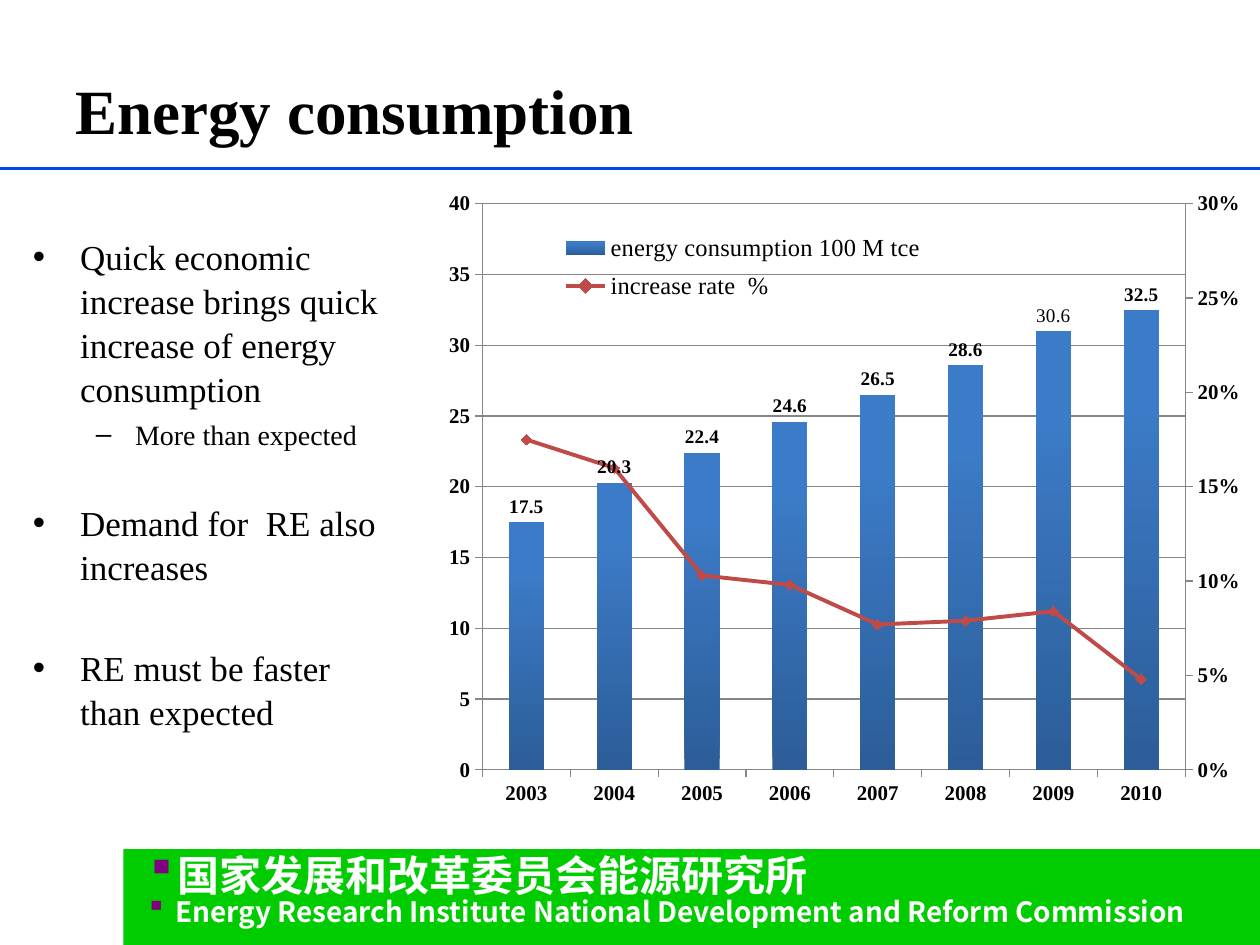
"""Build the energy consumption slide with its bullets, combined chart and footer."""
from copy import deepcopy
from dataclasses import dataclass

from lxml import etree
from pptx import Presentation
from pptx.chart.axis import ValueAxis
from pptx.chart.data import CategoryChartData
from pptx.dml.color import RGBColor
from pptx.enum.chart import (XL_CHART_TYPE, XL_LABEL_POSITION, XL_LEGEND_POSITION,
                             XL_MARKER_STYLE, XL_TICK_MARK)
from pptx.enum.shapes import MSO_CONNECTOR, MSO_SHAPE
from pptx.enum.text import MSO_ANCHOR, MSO_AUTO_SIZE, PP_ALIGN
from pptx.oxml.ns import qn
from pptx.util import Cm, Pt

COLUMNS = XL_CHART_TYPE.COLUMN_CLUSTERED
ABOVE_BAR = XL_LABEL_POSITION.OUTSIDE_END
LEGEND_RIGHT = XL_LEGEND_POSITION.RIGHT
DIAMOND = XL_MARKER_STYLE.DIAMOND
TICK_OUT = XL_TICK_MARK.OUTSIDE
TICK_NONE = XL_TICK_MARK.NONE
STRAIGHT = MSO_CONNECTOR.STRAIGHT
RECTANGLE = MSO_SHAPE.RECTANGLE
MIDDLE = MSO_ANCHOR.MIDDLE
TOP = MSO_ANCHOR.TOP
NO_FIT = MSO_AUTO_SIZE.NONE
LEFT = PP_ALIGN.LEFT

SERIF = "Times New Roman"
SANS = "Noto Sans CJK JP"
COLORS = {
    "text": "000000", "footer": "00CC00", "footer_text": "FFFFFF", "bullet": "800080",
    "rule": "0046F0", "grid": "868686", "rate": "BE4B48",
    "bar_bottom": "2C5D98", "bar_top": "3C7BC7",
}
YEARS = [str(year) for year in range(2003, 2011)]
CONSUMPTION = [17.5, 20.3, 22.4, 24.6, 26.5, 28.6, 31, 32.5]
INCREASE = [0.175, 0.16, 0.103, 0.098, 0.077, 0.079, 0.084, 0.048]


@dataclass
class Bullet:
    """One bulleted paragraph, with its indents in centimetres."""
    text: str
    size: int
    mark: str
    margin: float
    hang: float
    before: float = 0
    level: int = 0


POINTS = [
    Bullet("Quick economic increase brings quick increase of energy consumption",
           20, "•", 0.95, 0.95),
    Bullet("More than expected", 16, "–", 2.06, 0.79, 3.5, 1),
    Bullet("Demand for  RE also increases", 20, "•", 0.95, 0.95, 28),
    Bullet("RE must be faster than expected", 20, "•", 0.95, 0.95, 32),
]
INSTITUTE = [
    Bullet("国家发展和改革委员会能源研究所", 24, "▪", 0.6, 0.6),
    Bullet("Energy Research Institute National Development and Reform Commission",
           16, "▪", 0.6, 0.6, 7),
]


def color(key: str) -> RGBColor:
    """Return a palette colour."""
    return RGBColor.from_string(COLORS[key])


def style_font(font, size: float, color_key: str, name: str = SERIF, bold: bool = False) -> None:
    """Set size, colour, face and weight of a font."""
    font.size, font.name, font.bold = Pt(size), name, bold
    font.color.rgb = color(color_key)


def place(shape, left: float, top: float, width: float, height: float) -> None:
    """Move and size a shape, in centimetres."""
    shape.left, shape.top, shape.width, shape.height = map(Cm, (left, top, width, height))


def write_bullets(frame, bullets: list[Bullet], color_key: str, mark_key: str,
                  face: str, spacing: float, bold: bool = False) -> None:
    """Fill a text frame with bulleted paragraphs."""
    frame.word_wrap = True
    frame.auto_size = NO_FIT
    frame.vertical_anchor = TOP
    frame.text = "\n".join(bullet.text for bullet in bullets)
    for paragraph, bullet in zip(frame.paragraphs, bullets):
        paragraph.level = bullet.level
        properties = paragraph._p.get_or_add_pPr()
        properties.set("marL", str(Cm(bullet.margin)))
        properties.set("indent", str(-Cm(bullet.hang)))
        mark_color = etree.SubElement(properties, qn("a:buClr"))
        etree.SubElement(mark_color, qn("a:srgbClr"), val=COLORS[mark_key])
        etree.SubElement(properties, qn("a:buChar"), char=bullet.mark)
        paragraph.line_spacing = spacing
        paragraph.space_before = Pt(bullet.before)
        for run in paragraph.runs:
            style_font(run.font, bullet.size, color_key, face, bold)
            etree.SubElement(run._r.get_or_add_rPr(), qn("a:ea"), typeface=face)


def add_rule(slide, y: float, width: float) -> None:
    """Draw the line under the title."""
    rule = slide.shapes.add_connector(STRAIGHT, 0, Cm(y), Cm(width), Cm(y))
    rule.line.color.rgb = color("rule")
    rule.line.width = Pt(2)
    etree.SubElement(rule._element.spPr, qn("a:effectLst"))


def add_footer(slide) -> None:
    """Draw the institute's band."""
    band = slide.shapes.add_shape(RECTANGLE, Cm(2.49), Cm(17.12), Cm(22.91), Cm(1.93))
    band.shadow.inherit = False
    band.fill.solid()
    band.fill.fore_color.rgb = color("footer")
    band.line.fill.background()
    institute = slide.shapes.add_textbox(Cm(2.69), Cm(17.45), Cm(21.89), Cm(1.5))
    write_bullets(institute.text_frame, INSTITUTE, "footer_text", "bullet", SANS, 0.5, True)


def set_layout(parent, index: int, inner: bool, **fractions: float) -> None:
    """Give a chart part a manual layout in fractions of the chart."""
    for old in parent.findall(qn("c:layout")):
        parent.remove(old)
    layout = etree.Element(qn("c:layout"))
    manual = etree.SubElement(layout, qn("c:manualLayout"))
    if inner:
        etree.SubElement(manual, qn("c:layoutTarget"), val="inner")
    for key in ("xMode", "yMode"):
        etree.SubElement(manual, qn(f"c:{key}"), val="edge")
    for key, fraction in fractions.items():
        etree.SubElement(manual, qn(f"c:{key}"), val=str(fraction))
    parent.insert(index, layout)


def style_axis(axis) -> None:
    """Format the line, ticks and labels of an axis."""
    axis.format.line.color.rgb = color("grid")
    axis.major_tick_mark, axis.minor_tick_mark = TICK_OUT, TICK_NONE
    style_font(axis.tick_labels.font, 12, "text", bold=True)


def scale_axis(axis, maximum: float, step: float, number_format: str) -> None:
    """Set the range and number format of a value axis."""
    axis.minimum_scale, axis.maximum_scale, axis.major_unit = 0, maximum, step
    axis.tick_labels.number_format = number_format
    axis.tick_labels.number_format_is_linked = False


def move_rate_to_right_axis(chart) -> None:
    """Turn the second series into a line on its own value axis."""
    bars = chart.plots[0]._element
    rate = bars.findall(qn("c:ser"))[1]
    for flag in rate.findall(qn("c:invertIfNegative")):
        rate.remove(flag)
    line_plot = etree.Element(qn("c:lineChart"))
    etree.SubElement(line_plot, qn("c:grouping"), val="standard")
    etree.SubElement(line_plot, qn("c:varyColors"), val="0")
    line_plot.append(rate)
    etree.SubElement(line_plot, qn("c:marker"), val="1")
    bars.addnext(line_plot)

    left = chart.value_axis._element
    years = chart.category_axis._element
    right, hidden_years = deepcopy(left), deepcopy(years)
    for axis, own, other in ((hidden_years, "50010", "50020"), (right, "50020", "50010")):
        axis.find(qn("c:axId")).set("val", own)
        axis.find(qn("c:crossAx")).set("val", other)
        etree.SubElement(line_plot, qn("c:axId"), val=own)
    hidden_years.find(qn("c:delete")).set("val", "1")
    right.find(qn("c:axPos")).set("val", "r")
    right.find(qn("c:crosses")).set("val", "max")
    left.addnext(right)
    right.addnext(hidden_years)
    rate_axis = ValueAxis(right)
    rate_axis.has_major_gridlines = False
    scale_axis(rate_axis, 0.3, 0.05, "0%")


def add_energy_chart(slide) -> None:
    """Add the columns of consumption and the line of its increase."""
    energy = CategoryChartData()
    energy.categories = YEARS
    energy.add_series("energy consumption 100 M tce", CONSUMPTION)
    energy.add_series("increase rate  %", INCREASE, number_format="0%")
    chart = slide.shapes.add_chart(
        COLUMNS, Cm(8.33), Cm(3.38), Cm(16.66), Cm(14.3), energy).chart
    chart.has_title = False
    style_font(chart.font, 10, "text")
    style_axis(chart.category_axis)
    style_axis(chart.value_axis)
    scale_axis(chart.value_axis, 40, 5, "General")
    chart.value_axis.major_gridlines.format.line.color.rgb = color("grid")
    move_rate_to_right_axis(chart)

    columns, rates = chart.plots
    columns.gap_width = 150
    columns.vary_by_categories = False
    consumption, rate = columns.series[0], rates.series[0]
    fill = consumption.format.fill
    fill.gradient()
    fill.gradient_angle = 90
    for stop, key, position in zip(fill.gradient_stops, ("bar_bottom", "bar_top"), (0, 0.8)):
        stop.color.rgb = color(key)
        stop.position = position
    labels = consumption.data_labels
    labels.show_value = True
    labels.position = ABOVE_BAR
    style_font(labels.font, 11, "text", bold=True)
    label_2009 = consumption.points[YEARS.index("2009")].data_label
    label_2009.text_frame.text = "30.6"
    style_font(label_2009.text_frame.paragraphs[0].runs[0].font, 11, "text")
    label_2009.position = ABOVE_BAR

    rate.smooth = False
    rate.format.line.color.rgb = color("rate")
    rate.format.line.width = Pt(2.25)
    rate.marker.style, rate.marker.size = DIAMOND, 6
    rate.marker.format.fill.solid()
    rate.marker.format.fill.fore_color.rgb = color("rate")
    rate.marker.format.line.color.rgb = color("rate")

    chart.has_legend = True
    chart.legend.position = LEGEND_RIGHT
    chart.legend.include_in_layout = False
    style_font(chart.legend.font, 14, "text")
    set_layout(chart.legend._element, 1, False, x=0.15, y=0.08, w=0.5, h=0.12)
    set_layout(columns._element.getparent(), 0, True, x=0.084, y=0.051, w=0.852, h=0.798)


def main() -> None:
    """Build and save the slide."""
    deck = Presentation()
    deck.slide_width, deck.slide_height = Cm(25.4), Cm(19.05)
    slide = deck.slides.add_slide(deck.slide_layouts[1])
    add_footer(slide)
    add_rule(slide, 3.4, 25.4)

    title, points = slide.shapes.title, slide.placeholders[1]
    place(title, 1.27, 0.53, 19.84, 3.35)
    title.text_frame.text = "Energy consumption"
    title.text_frame.vertical_anchor = MIDDLE
    heading = title.text_frame.paragraphs[0]
    heading.alignment = LEFT
    style_font(heading.runs[0].font, 36, "text", bold=True)
    place(points, 0.41, 4.57, 7.75, 12.12)
    write_bullets(points.text_frame, POINTS, "text", "text", SERIF, 1.05)
    add_energy_chart(slide)
    deck.save("out.pptx")


if __name__ == "__main__":
    main()
